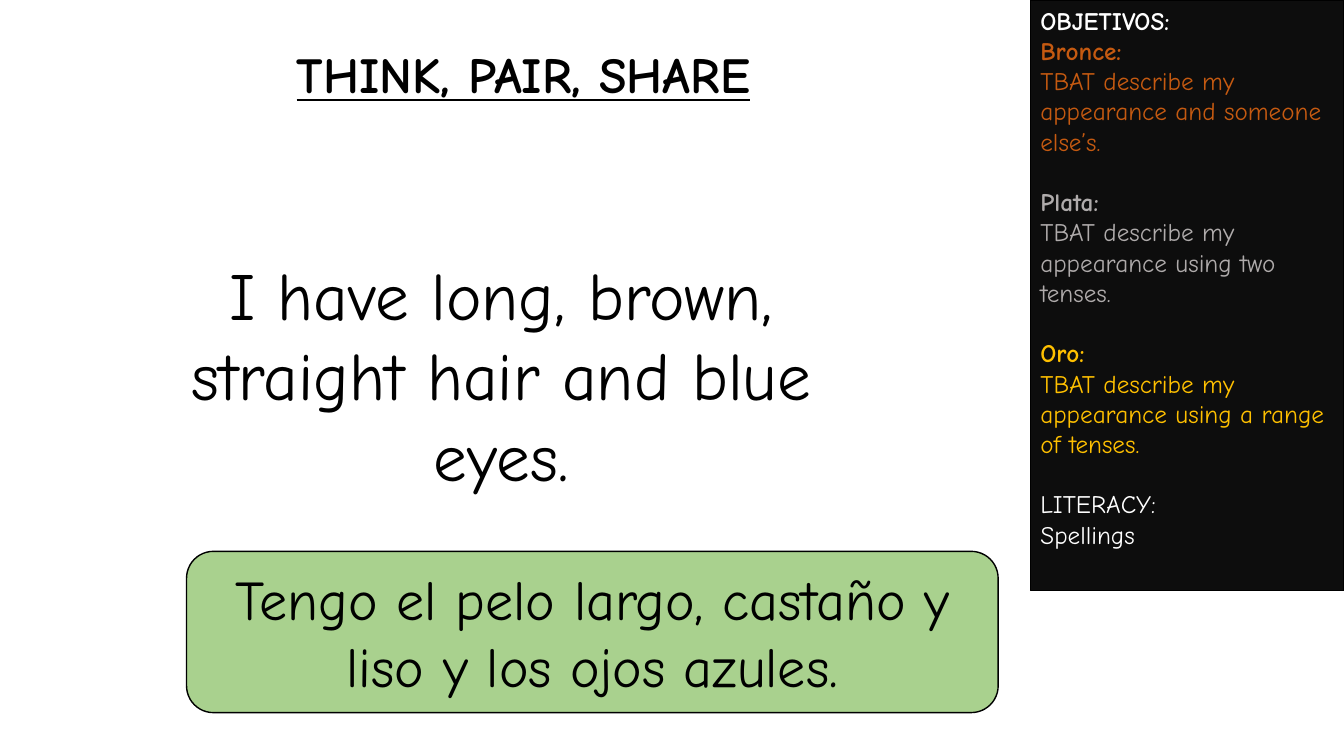
"""Build the Think, Pair, Share slide with its objectives panel."""
from pptx import Presentation
from pptx.dml.color import RGBColor
from pptx.enum import shapes, text
from pptx.util import Inches, Pt


def paint(target, colour):
    target.solid()
    target.fore_color.rgb = RGBColor.from_string(colour)


def write(para, words, colour, **formats):
    span = para.add_run()
    span.text = words
    paint(span.font.fill, colour)
    for name, value in {"name": "Comic Neue", **formats}.items():
        setattr(span.font, name, value)


deck = Presentation()
deck.slide_width, deck.slide_height = Inches(13.33), Inches(7.5)
page = deck.slides.add_slide(deck.slide_layouts[6])

panel = page.shapes.add_shape(
    shapes.MSO_SHAPE.RECTANGLE, Inches(10.22), Inches(0), Inches(3.11), Inches(5.86))
sentence = page.shapes.add_textbox(Inches(1.43), Inches(2.46), Inches(7.08), Inches(2.52))
title = page.shapes.add_textbox(Inches(2.14), Inches(0.38), Inches(6.1), Inches(0.71))
answer = page.shapes.add_shape(
    shapes.MSO_SHAPE.ROUNDED_RECTANGLE, Inches(1.85), Inches(5.47), Inches(8.05), Inches(1.6))

for box, fill in ((panel, "0D0D0D"), (answer, "A9D18E")):
    box.shadow.inherit = False
    paint(box.fill, fill)
    paint(box.line.fill, "000000")
    box.line.width = Pt(1)

for box, anchor in ((panel, "TOP"), (sentence, "TOP"), (title, "TOP"), (answer, "MIDDLE")):
    box.text_frame.word_wrap = True
    box.text_frame.vertical_anchor = text.MSO_ANCHOR[anchor]

for box, words, formats in (
    (sentence, "I have long, brown, straight hair and blue eyes.", {"size": Pt(48)}),
    (title, "THINK, PAIR, SHARE", {"size": Pt(36), "bold": True, "underline": True}),
    (answer, "Tengo el pelo largo, castaño y liso y los ojos azules.", {"size": Pt(40)}),
):
    para = box.text_frame.paragraphs[0]
    para.alignment = text.PP_ALIGN.CENTER
    write(para, words, "000000", **formats)

objectives = (
    ("OBJETIVOS:", "FFFFFF", True, 0),
    ("Bronce:", "C55A11", True, 0),
    ("TBAT describe my appearance and someone else’s.", "C55A11", False, 0),
    ("Plata:", "AFABAB", True, 21.6),
    ("TBAT describe my appearance using two tenses.", "AFABAB", False, 0),
    ("Oro:", "FFC000", True, 21.6),
    ("TBAT describe my appearance using a range of tenses.", "FFC000", False, 0),
    ("LITERACY:", "FFFFFF", False, 21.6),
    ("Spellings", "FFFFFF", False, 0),
)
for index, (words, colour, bold, gap) in enumerate(objectives):
    frame = panel.text_frame
    para = frame.add_paragraph() if index else frame.paragraphs[0]
    para.alignment = text.PP_ALIGN.LEFT
    para.space_before = Pt(gap)
    write(para, words, colour, size=Pt(18), bold=bold)

deck.save("out.pptx")
